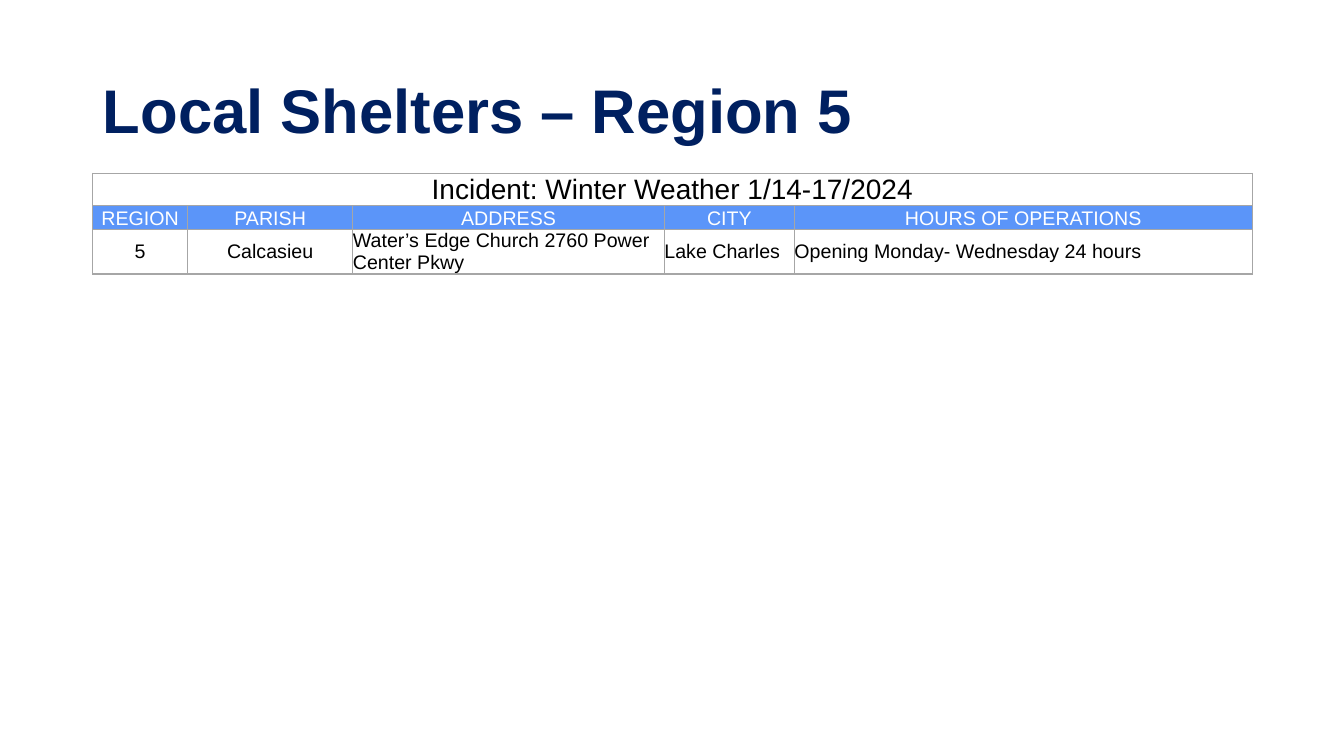
from lxml import etree
from pptx import Presentation
from pptx.dml.color import RGBColor
from pptx.enum import text
from pptx.oxml import ns
from pptx.util import Inches, Pt

HUES = {"navy": "002060", "blue": "5B95F9", "white": "FFFFFF",
        "black": "000000", "grey": "A6A6A6"}
FONT = "Arial"
WIDTHS = [0.94, 1.64, 3.09, 1.29, 4.54]
HEIGHTS = [0.32, 0.24, 0.43]
BANNER = "Incident: Winter Weather 1/14-17/2024"
HEADS = ["REGION", "PARISH", "ADDRESS", "CITY", "HOURS OF OPERATIONS"]
SHELTER = ["5", "Calcasieu", "Water’s Edge Church 2760 Power Center Pkwy",
           "Lake Charles", "Opening Monday- Wednesday 24 hours"]


def hue(name):
    return RGBColor.from_string(HUES[name])


def style(para, size, color, bold=False):
    for run in para.runs:
        run.font.name = FONT
        run.font.size = Pt(size)
        run.font.bold = bold
        run.font.color.rgb = hue(color)


def border(cell):
    props = cell._tc.get_or_add_tcPr()
    for spot, side in enumerate(("lnL", "lnR", "lnT", "lnB")):
        line = etree.Element(ns.qn("a:" + side), w=str(Pt(1)))
        fill = etree.SubElement(line, ns.qn("a:solidFill"))
        etree.SubElement(fill, ns.qn("a:srgbClr"), val=HUES["grey"])
        props.insert(spot, line)


def fill_cell(cell, words, size, color, back, align, inset):
    cell.text_frame.text = words
    cell.vertical_anchor = text.MSO_ANCHOR.MIDDLE
    cell.margin_left = cell.margin_right = cell.margin_top = Inches(inset)
    cell.margin_bottom = 0
    para = cell.text_frame.paragraphs[0]
    para.alignment = align
    style(para, size, color)
    if back:
        cell.fill.solid()
        cell.fill.fore_color.rgb = hue(back)
    else:
        cell.fill.background()


def add_title(slide, left, top, width, height):
    title = slide.shapes.title
    title.left, title.top = Inches(left), Inches(top)
    title.width, title.height = Inches(width), Inches(height)
    frame = title.text_frame
    frame.text = "Local Shelters – Region 5"
    frame.word_wrap = True
    frame.vertical_anchor = text.MSO_ANCHOR.MIDDLE
    para = frame.paragraphs[0]
    para.alignment = text.PP_ALIGN.LEFT
    para.line_spacing = 0.9
    style(para, 44, "navy", bold=True)


def add_shelters(slide, left, top):
    table = slide.shapes.add_table(
        len(HEIGHTS), len(WIDTHS), Inches(left), Inches(top),
        Inches(sum(WIDTHS)), Inches(sum(HEIGHTS))).table
    table.first_row = table.horz_banding = False
    for col, width in zip(table.columns, WIDTHS):
        col.width = Inches(width)
    for row, height in zip(table.rows, HEIGHTS):
        row.height = Inches(height)

    # Incident banner across all columns
    mid, near = text.PP_ALIGN.CENTER, text.PP_ALIGN.LEFT
    table.cell(0, 0).merge(table.cell(0, len(WIDTHS) - 1))
    fill_cell(table.cell(0, 0), BANNER, 20, "black", None, mid, 0.01)

    # Column heads and shelter details
    for num, (head, item) in enumerate(zip(HEADS, SHELTER)):
        fill_cell(table.cell(1, num), head, 14, "white", "blue", mid, 0.01)
        fill_cell(table.cell(2, num), item, 14, "black", "white",
                  mid if num < 2 else near, 0)
    for cell in table.iter_cells():
        border(cell)


def main():
    deck = Presentation()
    deck.slide_width, deck.slide_height = Inches(13.33), Inches(7.5)
    slide = deck.slides.add_slide(deck.slide_layouts[5])
    add_title(slide, 0.92, 0.4, 11.5, 1.45)
    add_shelters(slide, 0.92, 1.72)
    deck.save("out.pptx")


if __name__ == "__main__":
    main()
